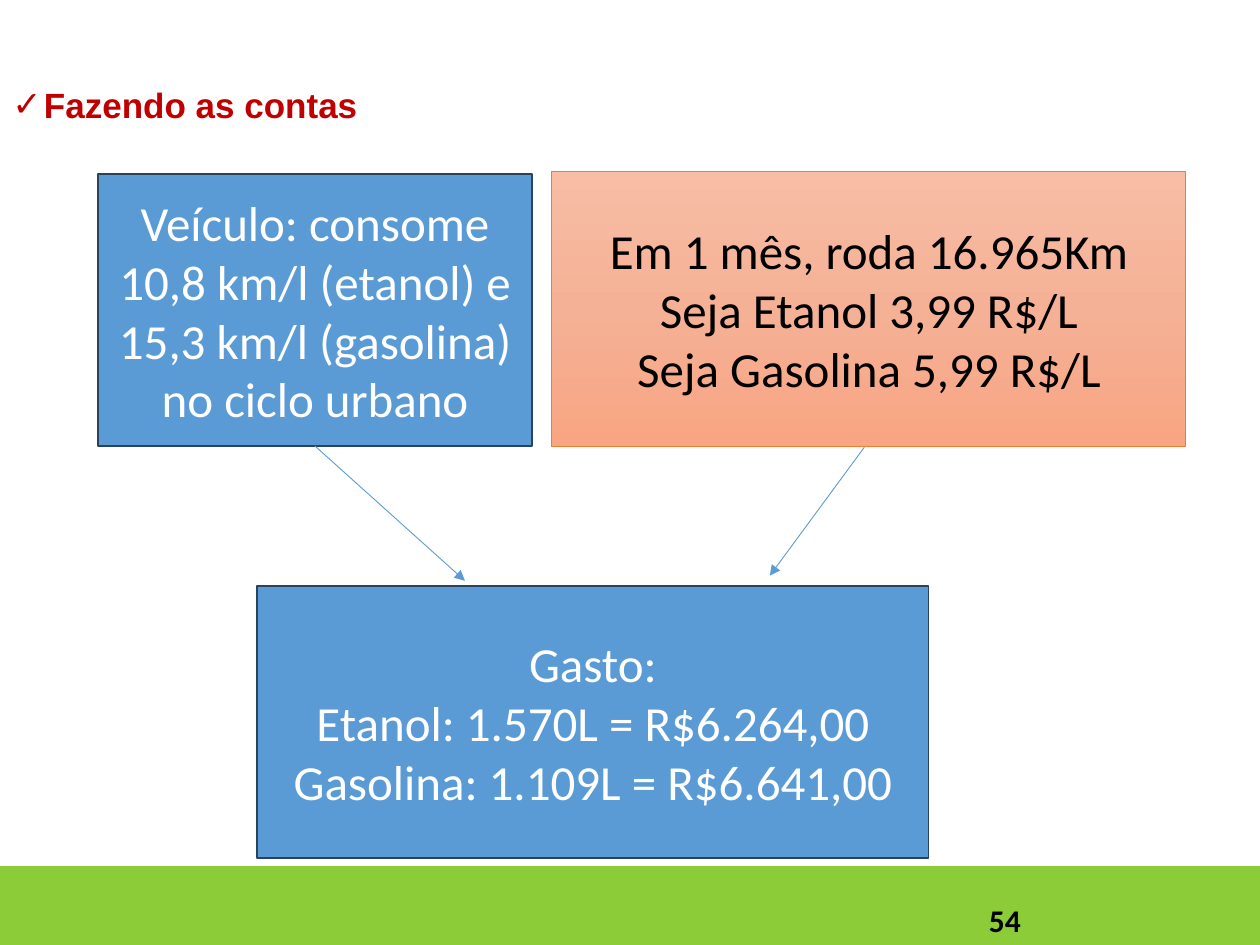
from copy import deepcopy

from lxml import etree
from pptx import Presentation
from pptx.dml.color import RGBColor
from pptx.enum import shapes, text
from pptx.oxml import ns
from pptx.util import Pt

COLORS = {
    "band": "8BCC38",
    "title": "C00000",
    "blue": "5B9BD5",
    "navy": "28445D",
    "orange": "ED7D31",
    "black": "000000",
    "white": "FFFFFF",
}
PEACH_STOPS = [(0, "F7BDA5"), (0.5, "F5B196"), (1, "F8A582")]


def rgb(name):
    return RGBColor.from_string(COLORS[name])


def add_bullet(paragraph, char, indent):
    properties = paragraph._p.get_or_add_pPr()
    properties.set("marL", str(Pt(indent)))
    properties.set("indent", str(-Pt(indent)))
    etree.SubElement(properties, ns.qn("a:buFont"), typeface="Arial")
    etree.SubElement(properties, ns.qn("a:buChar"), char=char)


def write(frame, lines, size=28, font="Calibri", color="white", bold=False,
          align=text.PP_ALIGN.CENTER, anchor=text.MSO_ANCHOR.MIDDLE,
          spacing=None, bullet=None):
    """Fill a text frame with one paragraph per line, all in one format."""
    frame.word_wrap = True
    frame.vertical_anchor = anchor
    for index, line in enumerate(lines):
        paragraph = frame.add_paragraph() if index else frame.paragraphs[0]
        if bullet:
            add_bullet(paragraph, bullet, 18)
        paragraph.alignment = align
        paragraph.line_spacing = spacing
        run = paragraph.add_run()
        run.text = line
        run.font.size = Pt(size)
        run.font.name = font
        run.font.bold = bold
        run.font.color.rgb = rgb(color)


def add_label(slide, left, top, width, height, lines, **style):
    label = slide.shapes.add_textbox(Pt(left), Pt(top), Pt(width), Pt(height))
    write(label.text_frame, lines, anchor=text.MSO_ANCHOR.TOP, **style)


def add_box(slide, left, top, width, height, lines=(), fill="blue",
            line="navy", line_width=1, **style):
    box = slide.shapes.add_shape(shapes.MSO_SHAPE.RECTANGLE, Pt(left), Pt(top),
                                 Pt(width), Pt(height))
    box.shadow.inherit = False
    box.fill.solid()
    box.fill.fore_color.rgb = rgb(fill)
    box.line.color.rgb = rgb(line)
    box.line.width = Pt(line_width)
    write(box.text_frame, lines, **style)
    return box


def shade_downwards(box, stops):
    """Give a box a top-to-bottom gradient through three or more stops."""
    box.fill.gradient()
    box.fill.gradient_angle = 270
    stop_list = box._element.xpath(".//a:gsLst")[0]
    while len(stop_list) < len(stops):
        stop_list.append(deepcopy(stop_list[0]))
    for stop, (position, color) in zip(box.fill.gradient_stops, stops):
        stop.position = position
        stop.color.rgb = RGBColor.from_string(color)


def add_arrow(slide, start, end):
    arrow = slide.shapes.add_connector(shapes.MSO_CONNECTOR.STRAIGHT,
                                       *map(Pt, start + end))
    arrow.line.color.rgb = rgb("blue")
    arrow.line.width = Pt(0.5)
    etree.SubElement(arrow.line._get_or_add_ln(), ns.qn("a:tailEnd"),
                     type="triangle")
    etree.SubElement(arrow._element.spPr, ns.qn("a:effectLst"))
    return arrow


def main():
    deck = Presentation()
    deck.slide_width, deck.slide_height = Pt(720), Pt(540)
    slide = deck.slides.add_slide(deck.slide_layouts[6])

    add_box(slide, 0, 495.4, 720, 44.6, fill="band", line="band")
    add_label(slide, 0, 46.8, 677.5, 40, ["Fazendo as contas"], size=20,
              font="Arial", color="title", bold=True, spacing=0.9,
              align=text.PP_ALIGN.JUSTIFY, bullet="✓")
    add_label(slide, 558, 511.2, 162, 28.8, ["54"], size=18, color="black",
              bold=True, align=text.PP_ALIGN.LEFT)

    add_box(slide, 146.9, 334.8, 383.8, 155.5,
            ["Gasto:", "Etanol: 1.570L = R$6.264,00",
             "Gasolina: 1.109L = R$6.641,00"])
    vehicle = add_box(slide, 56.2, 99.4, 247.7, 155.5,
                      ["Veículo: consome 10,8 km/l (etanol) e "
                       "15,3 km/l (gasolina) no ciclo urbano"])
    prices = add_box(slide, 315.4, 97.9, 362.2, 157,
                     ["Em 1 mês, roda 16.965Km", "Seja Etanol 3,99 R$/L",
                      "Seja Gasolina 5,99 R$/L"],
                     line="orange", line_width=0.5, color="black")
    shade_downwards(prices, PEACH_STOPS)

    vehicle_arrow = add_arrow(slide, (180, 254.9), (265.7, 331.9))
    vehicle_arrow.begin_connect(vehicle, 2)
    add_arrow(slide, (493.9, 255.6), (439.9, 329))

    deck.save("out.pptx")


if __name__ == "__main__":
    main()
